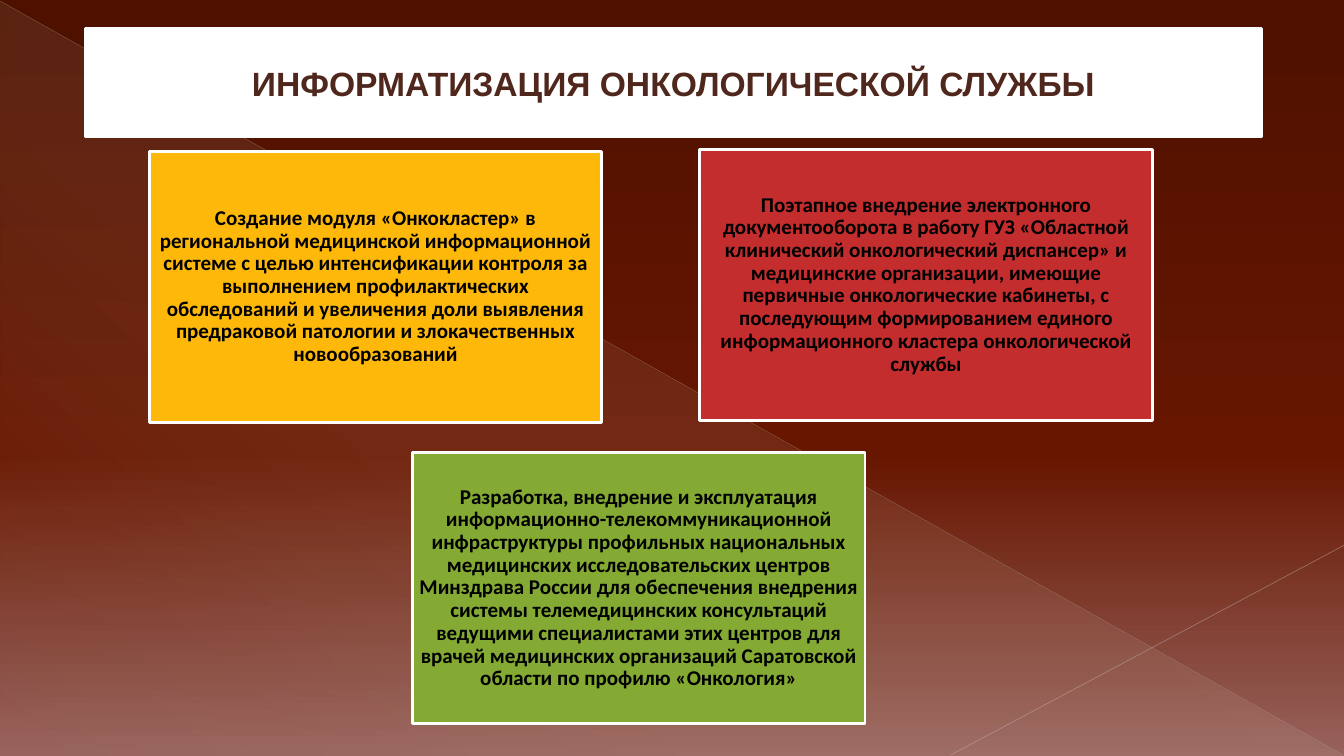
from lxml.etree import SubElement
from pptx import Presentation
from pptx.dml.color import RGBColor
from pptx.enum.shapes import MSO_CONNECTOR, MSO_SHAPE
from pptx.enum.text import MSO_ANCHOR, PP_ALIGN
from pptx.oxml.ns import qn
from pptx.util import Pt

PX = 9144  # 100 px to the inch
PAGE_WIDTH, PAGE_HEIGHT = 1333, 750
CARD_WIDTH, CARD_HEIGHT = 449, 269

WHITE = RGBColor(0xFF, 0xFF, 0xFF)
BLACK = RGBColor(0x00, 0x00, 0x00)
BROWN = RGBColor(0x4F, 0x27, 0x1C)
AMBER = RGBColor(0xFE, 0xB8, 0x0A)
RED = RGBColor(0xC3, 0x2D, 0x2E)
GREEN = RGBColor(0x84, 0xAA, 0x33)
DARK_MAROON = RGBColor(0x4E, 0x11, 0x00)
MAROON = RGBColor(0x67, 0x16, 0x00)
DUSTY_ROSE = RGBColor(0x97, 0x62, 0x5B)
CREAM = RGBColor(0xE7, 0xDE, 0xC9)
GREY = RGBColor(0xBD, 0xB3, 0xB2)
LIGHT_GREY = RGBColor(0xC5, 0xBC, 0xBB)

TITLE = "ИНФОРМАТИЗАЦИЯ ОНКОЛОГИЧЕСКОЙ СЛУЖБЫ"
CARDS = [
    (148, 150, AMBER,
     "Создание модуля «Онкокластер» в региональной медицинской информационной "
     "системе с целью интенсификации контроля за выполнением профилактических "
     "обследований и увеличения доли выявления предраковой патологии и "
     "злокачественных новообразований"),
    (694, 148, RED,
     "Поэтапное внедрение электронного документооборота в работу ГУЗ «Областной "
     "клинический онкологический диспансер» и медицинские организации, имеющие "
     "первичные онкологические кабинеты, с последующим формированием единого "
     "информационного кластера онкологической службы"),
    (409, 449, GREEN,
     "Разработка, внедрение и эксплуатация информационно-телекоммуникационной "
     "инфраструктуры профильных национальных медицинских исследовательских "
     "центров Минздрава России для обеспечения внедрения системы "
     "телемедицинских консультаций ведущими специалистами этих центров для "
     "врачей медицинских организаций Саратовской области по профилю «Онкология»"),
]


def add_alpha(color_element, percent):
    SubElement(color_element, qn("a:alpha"), val=str(percent * 1000))


def set_gradient(fill, owner, stops, angle):
    """Fill with (position, colour, opacity) stops, all in percent; angle is clockwise."""
    fill.gradient()
    gradient = owner.find(".//" + qn("a:gradFill"))
    stop_list = gradient.find(qn("a:gsLst"))
    for old_stop in list(stop_list):
        stop_list.remove(old_stop)
    for position, color, opacity in stops:
        stop = SubElement(stop_list, qn("a:gs"), pos=str(position * 1000))
        color_element = SubElement(stop, qn("a:srgbClr"), val=str(color))
        if opacity < 100:
            add_alpha(color_element, opacity)
    gradient.find(qn("a:lin")).set("ang", str(angle * 60000))


def add_thin_line(page, start, end, color, width, opacity):
    line = page.shapes.add_connector(
        MSO_CONNECTOR.STRAIGHT, *(length * PX for length in start + end))
    line.line.color.rgb = color
    line.line.width = Pt(width)
    add_alpha(line._element.find(".//" + qn("a:srgbClr")), opacity)
    SubElement(line._element.spPr, qn("a:effectLst"))


def add_backdrop(page, width, height):
    set_gradient(page.background.fill, page._element,
                 [(0, DARK_MAROON, 100), (60, MAROON, 100), (100, DUSTY_ROSE, 100)], 90)
    triangle = page.shapes.add_shape(
        MSO_SHAPE.RIGHT_TRIANGLE, PX, 2 * PX, (width - 2) * PX, (height - 2) * PX)
    triangle.shadow.inherit = False
    triangle.line.fill.background()
    set_gradient(triangle.fill, triangle._element.spPr,
                 [(0, CREAM, 10), (70, CREAM, 8), (100, CREAM, 1)], 133)
    add_thin_line(page, (0, 1), (width - 1, height - 1), GREY, 0.39, 35)
    add_thin_line(page, (width, 541), (943, height - 1), LIGHT_GREY, 0.47, 45)


def add_panel(page, box, fill_color, text, font_name, size, text_color):
    """Add a white-edged rectangle with bold centred text; return its paragraph."""
    panel = page.shapes.add_shape(MSO_SHAPE.RECTANGLE, *(length * PX for length in box))
    panel.shadow.inherit = False
    panel.fill.solid()
    panel.fill.fore_color.rgb = fill_color
    panel.line.color.rgb = WHITE
    panel.line.width = Pt(2)
    frame = panel.text_frame
    frame.word_wrap = True
    frame.vertical_anchor = MSO_ANCHOR.MIDDLE
    frame.margin_left = frame.margin_right = 6 * PX
    frame.margin_top = frame.margin_bottom = 6 * PX
    para = frame.paragraphs[0]
    para.text = text
    para.alignment = PP_ALIGN.CENTER
    para.font.name = font_name
    para.font.size = Pt(size)
    para.font.bold = True
    para.font.color.rgb = text_color
    return para


def add_title(page, box):
    add_panel(page, box, WHITE, TITLE, "Arial", 24, BROWN)


def add_card(page, box, color, text):
    para = add_panel(page, box, color, text, "Calibri", 15, BLACK)
    para.line_spacing = 0.9


def main():
    deck = Presentation()
    deck.slide_width = PAGE_WIDTH * PX
    deck.slide_height = PAGE_HEIGHT * PX
    page = deck.slides.add_slide(deck.slide_layouts[6])
    add_backdrop(page, PAGE_WIDTH, PAGE_HEIGHT)
    for left, top, color, text in CARDS:
        add_card(page, (left, top, CARD_WIDTH, CARD_HEIGHT), color, text)
    add_title(page, (85, 28, 1166, 108))
    deck.save("out.pptx")


if __name__ == "__main__":
    main()
